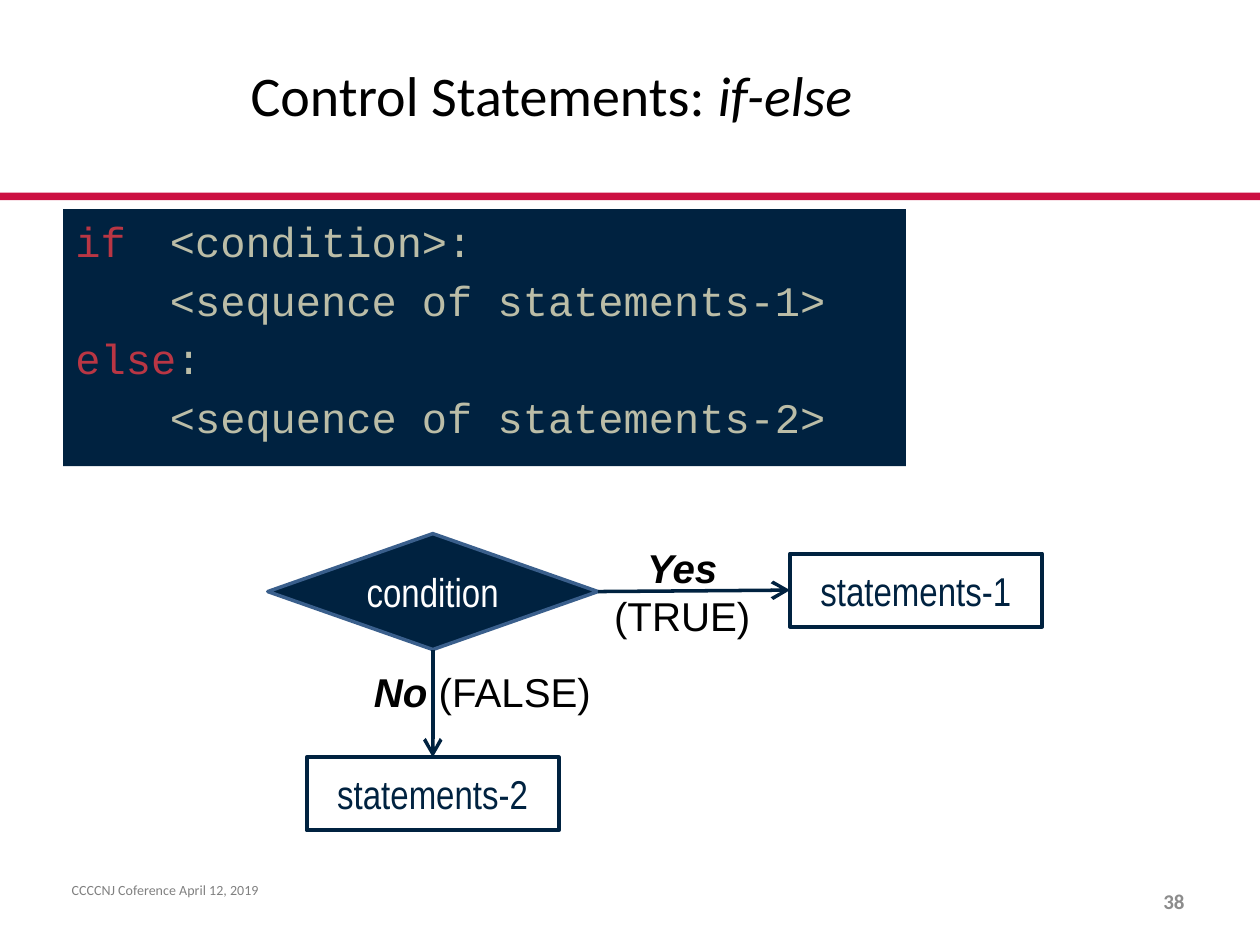
import lxml.etree
import pptx
import pptx.dml.color
import pptx.enum.shapes
import pptx.enum.text
import pptx.oxml.ns
import pptx.util

SHAPE = pptx.enum.shapes.MSO_SHAPE
ALIGN = pptx.enum.text.PP_ALIGN
ANCHOR = pptx.enum.text.MSO_ANCHOR
Pt = pptx.util.Pt
qn = pptx.oxml.ns.qn

COLORS = {
    "white": "FFFFFF", "black": "000000", "navy": "002240", "outline": "3A5F8C",
    "bar": "CC1042", "keyword": "B93644", "code": "BBBDA7",
    "footer": "808080", "number": "8C8C8C",
}

TITLE = [[("Control Statements: ", "black", ""), ("if-else", "black", "i")]]
CODE = [
    [("if \t", "keyword", ""), ("<condition>:", "code", "")],
    [("\t<sequence of statements-1>", "code", "")],
    [("else", "keyword", ""), (":", "code", "")],
    [("\t<sequence of statements-2>", "code", "")],
]
FOOTER = [[("CCCCNJ Coference April 12, 2019", "footer", "")]]
NUMBER = [[("38", "number", "b")]]

NODES = {
    "test": ("condition", SHAPE.FLOWCHART_DECISION, (34.35, 62.6), (26.2, 12.27),
             "navy", "white", "outline", 2),
    "yes": ("statements-1", SHAPE.FLOWCHART_PROCESS, (72.7, 62.45), (20, 7.73),
            "white", "navy", "navy", 2.25),
    "no": ("statements-2", SHAPE.FLOWCHART_PROCESS, (34.35, 84), (20, 7.73),
           "white", "navy", "navy", 2.25),
}
BRANCHES = [
    ("yes", 3, 1, (47.2, 56.8, 13.9, 11.73),
     [[("Yes", "black", "bi")], [("(TRUE)", "black", "")]]),
    ("no", 2, 0, (27.3, 70, 22, 6.53),
     [[("No", "black", "bi"), (" (FALSE)", "black", "")]]),
]

prs = pptx.Presentation()
prs.slide_width = pptx.util.Inches(10)
prs.slide_height = pptx.util.Inches(7.5)
s = prs.slides.add_slide(prs.slide_layouts[6])


def rgb(name):
    return pptx.dml.color.RGBColor.from_string(COLORS[name])


def place(x, y, w, h):
    return [int(share * side / 100) for share, side in
            zip((x, y, w, h), (prs.slide_width, prs.slide_height) * 2)]


def write(sp, lines, font, size, align=ALIGN.LEFT, anchor=ANCHOR.TOP, wrap=True):
    tf = sp.text_frame
    tf.word_wrap = wrap
    tf.vertical_anchor = anchor
    for i, line in enumerate(lines):
        p = tf.paragraphs[0] if i == 0 else tf.add_paragraph()
        p.alignment = align
        for text, color, style in line:
            r = p.add_run()
            r.text = text
            r.font.name = font
            r.font.size = Pt(size)
            r.font.bold = "b" in style
            r.font.italic = "i" in style
            r.font.color.rgb = rgb(color)
    return tf


def add_text(box, *args, **kwargs):
    return write(s.shapes.add_textbox(*place(*box)), *args, **kwargs)


def add_shape(kind, box, fill, line=None, width=0):
    sp = s.shapes.add_shape(kind, *place(*box))
    sp.shadow.inherit = False
    sp.fill.solid()
    sp.fill.fore_color.rgb = rgb(fill)
    if line:
        sp.line.color.rgb = rgb(line)
        sp.line.width = Pt(width)
    else:
        sp.line.fill.background()
    return sp


def add_arrow(start, start_site, end, end_site):
    c = s.shapes.add_connector(pptx.enum.shapes.MSO_CONNECTOR.STRAIGHT, 0, 0, 0, 0)
    c.begin_connect(start, start_site)
    c.end_connect(end, end_site)
    c.line.color.rgb = rgb("navy")
    c.line.width = Pt(2)
    lxml.etree.SubElement(c.line._get_or_add_ln(), qn("a:tailEnd"),
                          type="arrow", w="lg", len="lg")
    lxml.etree.SubElement(c._element.spPr, qn("a:effectLst"))


add_shape(SHAPE.RECTANGLE, (0, 20.4, 100, 0.8), "bar")
add_text((18.9, 4, 79.9, 11.87), TITLE, "Calibri", 32, anchor=ANCHOR.MIDDLE)

panel = add_shape(SHAPE.RECTANGLE, (5, 22.13, 66.9, 27.2), "navy")
tf = write(panel, CODE, "Courier New", 24)
indent = pptx.util.Inches(0.75)
for i, p in enumerate(tf.paragraphs):
    pPr = p._p.get_or_add_pPr()
    pPr.set("marL", str(indent))
    pPr.set("indent", str(-indent))
    if i:
        p.space_before = Pt(4.8)

add_text((4.7, 92.67, 66.9, 5.33), FOOTER, "Calibri", 8, ALIGN.JUSTIFY)
add_text((71.7, 92.67, 23.3, 5.33), NUMBER, "Calibri", 12, ALIGN.RIGHT, ANCHOR.MIDDLE)

nodes = {}
for name, (text, kind, (cx, cy), (w, h), fill, color, line, width) in NODES.items():
    sp = add_shape(kind, (cx - w / 2, cy - h / 2, w, h), fill, line, width)
    write(sp, [[(text, color, "")]], "Arial Narrow", 23, ALIGN.CENTER, ANCHOR.MIDDLE)
    nodes[name] = sp

for target, start_site, end_site, box, label in BRANCHES:
    add_arrow(nodes["test"], start_site, nodes[target], end_site)
    tf = add_text(box, label, "Arial", 23, ALIGN.CENTER, wrap=False)
    tf.auto_size = pptx.enum.text.MSO_AUTO_SIZE.SHAPE_TO_FIT_TEXT

prs.save("out.pptx")
